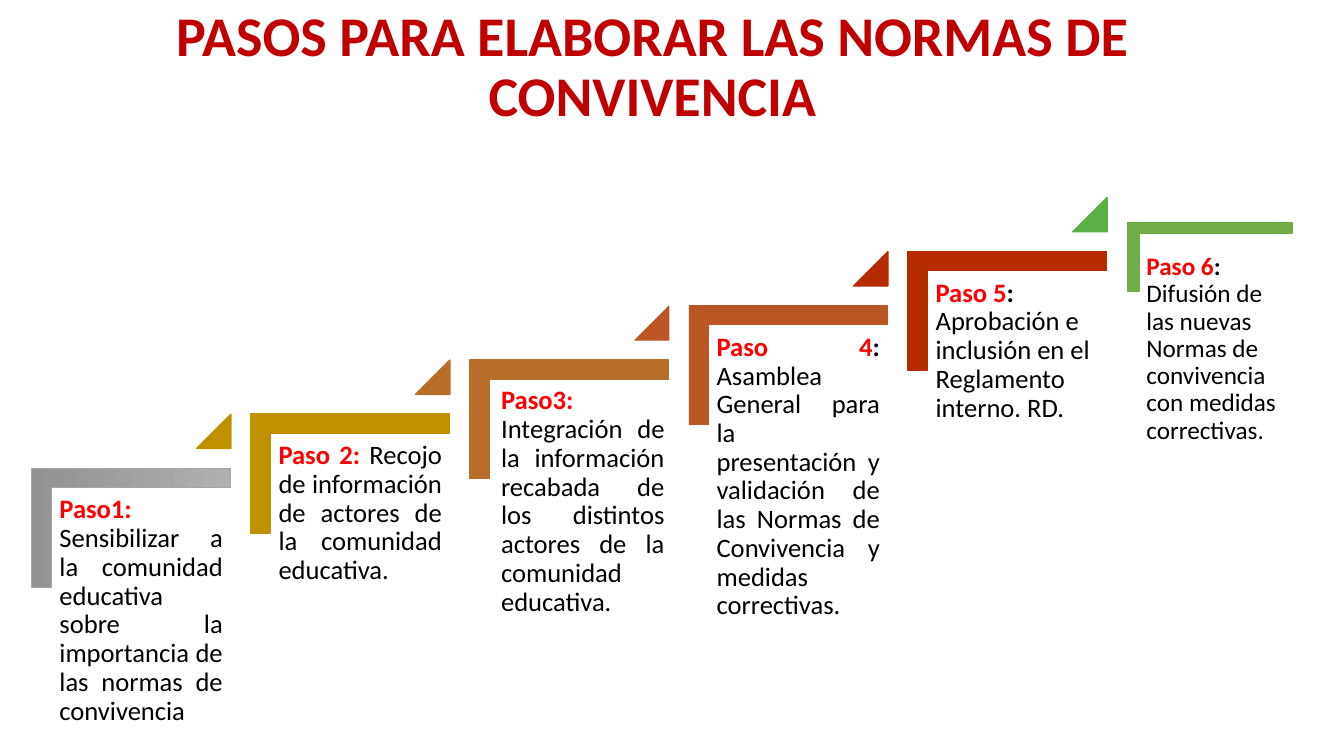
from dataclasses import dataclass

from pptx import Presentation
from pptx.dml.color import RGBColor as RGB
from pptx.enum.shapes import MSO_SHAPE as Preset
from pptx.enum.text import MSO_ANCHOR as Anchor, PP_ALIGN as Align
from pptx.slide import Slide
from pptx.text.text import _Paragraph as Paragraph
from pptx.util import Inches, Pt


@dataclass(frozen=True)
class Theme:
    font: str = "Calibri"
    title_size: int = 40
    title: str = "C00000"
    label: str = "FF0000"
    body: str = "000000"
    gradient_start: str = "AFAFAF"
    gradient_end: str = "939393"


@dataclass(frozen=True)
class Box:
    left: float
    top: float
    width: float
    height: float

    def climb(self, index: int) -> "Box":
        """Return this box moved up the staircase by index steps."""
        return Box(self.left + index * STEP_PITCH, self.top - index * STEP_RISE,
                   self.width, self.height)

    def lengths(self) -> tuple[Inches, Inches, Inches, Inches]:
        return (Inches(self.left), Inches(self.top),
                Inches(self.width), Inches(self.height))


@dataclass(frozen=True)
class Step:
    label: str
    separator: str
    body: str
    color: str
    corner: Box
    text: Box
    line_width: float = 1
    size: int = 19
    inset: float = 0.08
    align: Align = Align.JUSTIFY
    gradient: bool = False


THEME = Theme()
STEP_PITCH = 8.69 / 4
STEP_RISE = 2.15 / 4
CORNER_ADJUSTMENT = 0.161
TITLE_BOX = Box(1.43, 0.12, 10.08, 1.12)
CORNER = Box(0.71, 4.25, 1.18, 1.97)
TEXT = Box(0.51, 4.84, 1.78, 1.56)
TRIANGLE = Box(1.95, 4.11, 0.34, 0.34)

STEPS = [
    Step("Paso1: ", "",
         "Sensibilizar a la comunidad educativa sobre la importancia de las "
         "normas de convivencia",
         "A5A5A5", CORNER, TEXT, line_width=0.5, gradient=True),
    Step("Paso 2: ", "",
         "Recojo de información de actores de la comunidad educativa.",
         "BF9000", CORNER.climb(1), TEXT.climb(1)),
    Step("Paso3: ", "",
         "Integración de la información recabada de los distintos actores de "
         "la comunidad educativa.",
         "B76E28", CORNER.climb(2), Box(4.89, 3.76, 1.78, 1.56)),
    Step("Paso 4", ": ",
         "Asamblea General para la presentación y validación de las Normas de "
         "Convivencia y medidas correctivas.",
         "BB5624", CORNER.climb(3), TEXT.climb(3), line_width=0.5),
    Step("Paso 5", ": ",
         "Aprobación e inclusión en el Reglamento interno. RD.",
         "B62C00", CORNER.climb(4), TEXT.climb(4), align=Align.LEFT),
    Step("Paso 6", ": ",
         "Difusión de las nuevas Normas de convivencia con medidas correctivas.",
         "70AD47", Box(11.66, 1.73, 0.68, 1.63), Box(11.22, 2.37, 1.78, 1.56),
         size=18, inset=0.15, align=Align.LEFT),
]
TRIANGLE_COLORS = [step.color for step in STEPS[1:5]] + ["5BB046"]


def add_run(paragraph: Paragraph, text: str, size: int, color: str, bold: bool) -> None:
    run = paragraph.add_run()
    run.text = text
    run.font.name = THEME.font
    run.font.size = Pt(size)
    run.font.bold = bold
    run.font.color.rgb = RGB.from_string(color)


def add_paragraph_box(slide: Slide, box: Box, align: Align, anchor: Anchor,
                      inset_x: float, inset_y: float) -> Paragraph:
    """Add a wrapping text box and return its only paragraph."""
    frame = slide.shapes.add_textbox(*box.lengths()).text_frame
    frame.word_wrap = True
    frame.vertical_anchor = anchor
    frame.margin_left = frame.margin_right = Inches(inset_x)
    frame.margin_top = frame.margin_bottom = Inches(inset_y)
    paragraph = frame.paragraphs[0]
    paragraph.alignment = align
    paragraph.line_spacing = 0.9
    return paragraph


def add_preset(slide: Slide, preset: Preset, box: Box, color: str, line_width: float,
               adjustments: list[float], rotation: float = 0, gradient: bool = False) -> None:
    shape = slide.shapes.add_shape(preset, *box.lengths())
    shape.shadow.inherit = False
    shape.rotation = rotation
    for index, value in enumerate(adjustments):
        shape.adjustments[index] = value
    if gradient:
        shape.fill.gradient()
        shape.fill.gradient_angle = 270
        stops = shape.fill.gradient_stops
        stops[0].color.rgb = RGB.from_string(THEME.gradient_start)
        stops[1].color.rgb = RGB.from_string(THEME.gradient_end)
    else:
        shape.fill.solid()
        shape.fill.fore_color.rgb = RGB.from_string(color)
    shape.line.color.rgb = RGB.from_string(color)
    shape.line.width = Pt(line_width)


def add_step(slide: Slide, step: Step) -> None:
    add_preset(slide, Preset.CORNER, step.corner, step.color, step.line_width,
               [CORNER_ADJUSTMENT] * 2, rotation=90, gradient=step.gradient)
    paragraph = add_paragraph_box(slide, step.text, step.align, Anchor.TOP,
                                  step.inset, step.inset)
    add_run(paragraph, step.label, step.size, THEME.label, True)
    if step.separator:
        add_run(paragraph, step.separator, step.size, THEME.body, True)
    add_run(paragraph, step.body, step.size, THEME.body, False)


def main() -> None:
    presentation = Presentation()
    presentation.slide_width = Inches(13.33)
    presentation.slide_height = Inches(7.5)
    slide = presentation.slides.add_slide(presentation.slide_layouts[6])

    title = add_paragraph_box(slide, TITLE_BOX, Align.CENTER, Anchor.MIDDLE, 0.1, 0.05)
    add_run(title, "PASOS PARA ELABORAR LAS NORMAS DE CONVIVENCIA",
            THEME.title_size, THEME.title, True)
    for step in STEPS:
        add_step(slide, step)
    for index, color in enumerate(TRIANGLE_COLORS):
        line_width = STEPS[index + 1].line_width
        add_preset(slide, Preset.ISOSCELES_TRIANGLE, TRIANGLE.climb(index),
                   color, line_width, [1])
    presentation.save("out.pptx")


if __name__ == "__main__":
    main()
